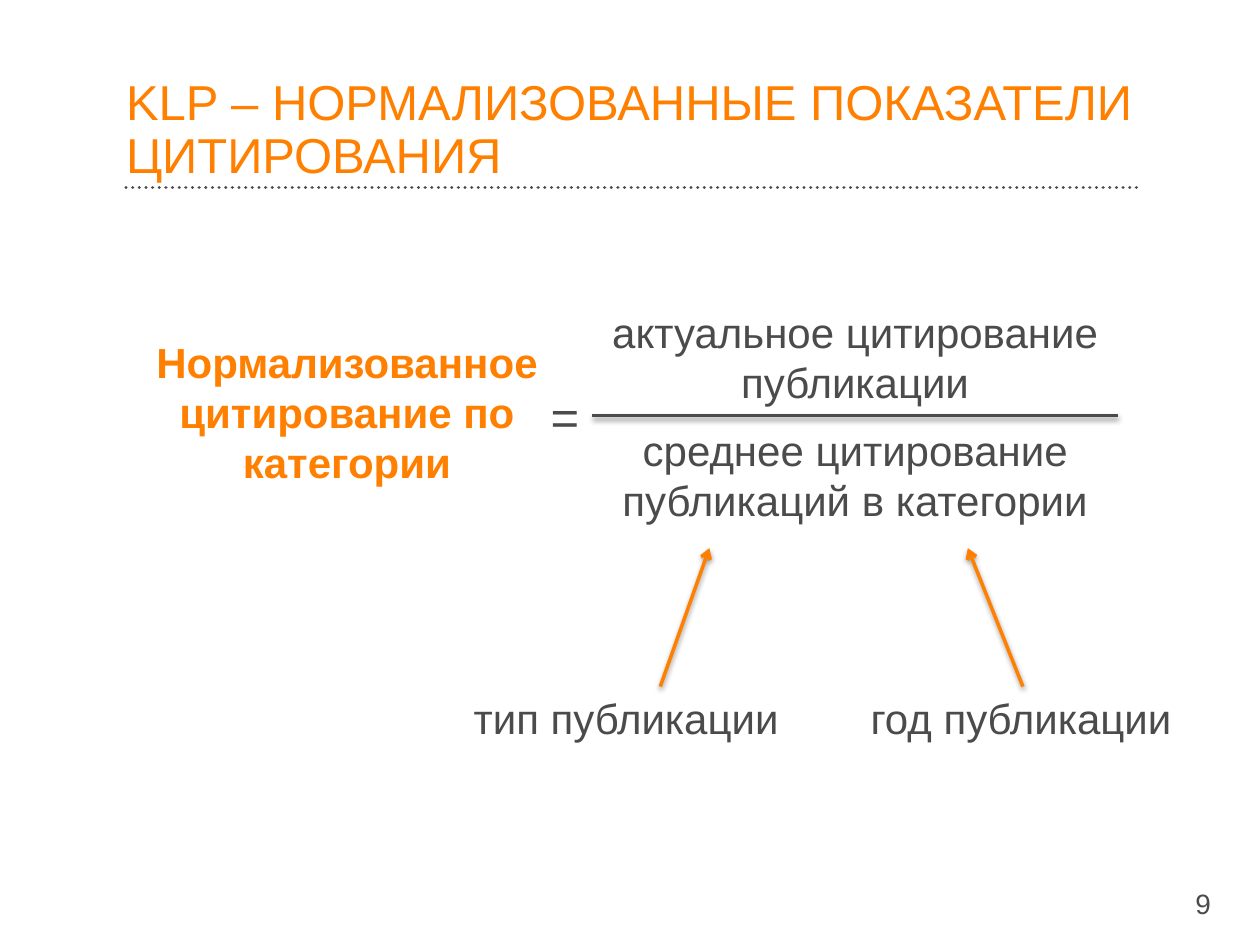
from dataclasses import dataclass

import pptx
import pptx.dml.color
import pptx.enum.dml
import pptx.enum.shapes
import pptx.enum.text
import pptx.oxml
import pptx.oxml.ns
import pptx.util

Cm = pptx.util.Cm
Pt = pptx.util.Pt
Align = pptx.enum.text.PP_ALIGN
Anchor = pptx.enum.text.MSO_ANCHOR
Dash = pptx.enum.dml.MSO_LINE

SHADOW = (
    '<a:effectLst {}><a:outerShdw blurRad="40000" dist="20000" dir="5400000" rotWithShape="0">'
    '<a:srgbClr val="000000"><a:alpha val="38000"/></a:srgbClr></a:outerShdw></a:effectLst>'
).format(pptx.oxml.ns.nsdecls("a"))
NO_EFFECT = "<a:effectLst {}/>".format(pptx.oxml.ns.nsdecls("a"))


@dataclass(frozen=True)
class Theme:
    font: str = "Arial"
    accent: str = "FF8000"
    text: str = "4B4B4B"
    title_size: int = 28
    body_size: int = 24
    number_size: int = 16


THEME = Theme()


@dataclass(frozen=True)
class Label:
    """Text with its box in centimetres."""
    text: str
    left: float
    top: float
    width: float
    height: float
    size: int = THEME.body_size
    color: str = THEME.text
    bold: bool = False
    align: Align = Align.CENTER
    wrap: bool = True


@dataclass(frozen=True)
class Line:
    """Straight line between two points in centimetres."""
    start: tuple[float, float]
    end: tuple[float, float]
    color: str = THEME.text
    width: float = 2
    dash: Dash | None = None
    arrow: bool = False
    shadow: bool = True


TITLE = Label("KLP – НОРМАЛИЗОВАННЫЕ ПОКАЗАТЕЛИ ЦИТИРОВАНИЯ", 2.54, 1.4, 20.47, 2.31,
              THEME.title_size, THEME.accent, align=Align.LEFT)
TITLE_RULE = Line((2.54, 3.78), (23.01, 3.78), width=1.9, dash=Dash.ROUND_DOT, shadow=False)

FRACTION_LEFT, FRACTION_WIDTH, BAR_Y = 11.94, 10.6, 8.38
FORMULA_LABELS = [
    Label("Нормализованное цитирование по категории", 2.84, 6.65, 8.31, 3.33,
          color=THEME.accent, bold=True),
    Label("=", 10.85, 7.67, 1.09, 1.45, THEME.title_size, align=Align.LEFT, wrap=False),
    Label("актуальное цитирование публикации", FRACTION_LEFT, 6.05, FRACTION_WIDTH, 2.31),
    Label("среднее цитирование публикаций в категории",
          FRACTION_LEFT, 8.43, FRACTION_WIDTH, 2.31),
]
FRACTION_BAR = Line((FRACTION_LEFT, BAR_Y), (FRACTION_LEFT + FRACTION_WIDTH, BAR_Y))

FACTOR_Y, ARROW_TIP_Y = 13.84, 11.05
FACTOR_LABELS = [
    Label("тип публикации", 9.3, FACTOR_Y, 6.73, 1.27, align=Align.LEFT, wrap=False),
    Label("год публикации", 17.3, FACTOR_Y, 6.63, 1.27, align=Align.LEFT, wrap=False),
]
ARROWS = [
    Line((start_x, FACTOR_Y), (tip_x, ARROW_TIP_Y), THEME.accent, arrow=True)
    for start_x, tip_x in ((13.31, 14.3), (20.62, 19.51))
]
PAGE_NUMBER = Label("9", 23.39, 17.75, 1.27, 0.64, THEME.number_size, align=Align.RIGHT)


def write_label(shape, label: Label) -> None:
    shape.left, shape.top = Cm(label.left), Cm(label.top)
    shape.width, shape.height = Cm(label.width), Cm(label.height)
    frame = shape.text_frame
    frame.text = label.text
    frame.word_wrap = label.wrap
    frame.auto_size = pptx.enum.text.MSO_AUTO_SIZE.NONE
    paragraph = frame.paragraphs[0]
    paragraph.alignment = label.align
    font = paragraph.font
    font.name, font.size, font.bold = THEME.font, Pt(label.size), label.bold
    font.color.rgb = pptx.dml.color.RGBColor.from_string(label.color)


def add_label(shapes, label: Label) -> None:
    write_label(shapes.add_textbox(0, 0, 0, 0), label)


def add_line(shapes, line: Line) -> None:
    connector = shapes.add_connector(
        pptx.enum.shapes.MSO_CONNECTOR.STRAIGHT,
        *(Cm(value) for value in line.start + line.end))
    connector.line.width = Pt(line.width)
    connector.line.color.rgb = pptx.dml.color.RGBColor.from_string(line.color)
    properties = connector._element.spPr
    outline = properties.find(pptx.oxml.ns.qn("a:ln"))
    if line.dash is not None:
        connector.line.dash_style = line.dash
        outline.set("cap", "rnd")
    if line.arrow:
        outline.append(pptx.oxml.parse_xml(
            '<a:tailEnd {} type="arrow"/>'.format(pptx.oxml.ns.nsdecls("a"))))
    properties.append(pptx.oxml.parse_xml(SHADOW if line.shadow else NO_EFFECT))


def add_title(slide) -> None:
    title = slide.shapes.title
    write_label(title, TITLE)
    frame = title.text_frame
    frame.vertical_anchor = Anchor.BOTTOM
    frame.margin_left = frame.margin_right = frame.margin_top = frame.margin_bottom = 0
    frame.paragraphs[0].line_spacing = 0.9


def main() -> None:
    presentation = pptx.Presentation()
    presentation.slide_width, presentation.slide_height = Cm(25.4), Cm(19.05)
    title_only = presentation.slide_layouts[5]
    slide = presentation.slides.add_slide(title_only)

    add_line(slide.shapes, TITLE_RULE)
    add_title(slide)
    formula = slide.shapes.add_group_shape()
    for label in FORMULA_LABELS:
        add_label(formula.shapes, label)
    add_line(formula.shapes, FRACTION_BAR)
    for label in FACTOR_LABELS:
        add_label(slide.shapes, label)
    for arrow in ARROWS:
        add_line(slide.shapes, arrow)
    add_label(slide.shapes, PAGE_NUMBER)
    presentation.save("out.pptx")


if __name__ == "__main__":
    main()
